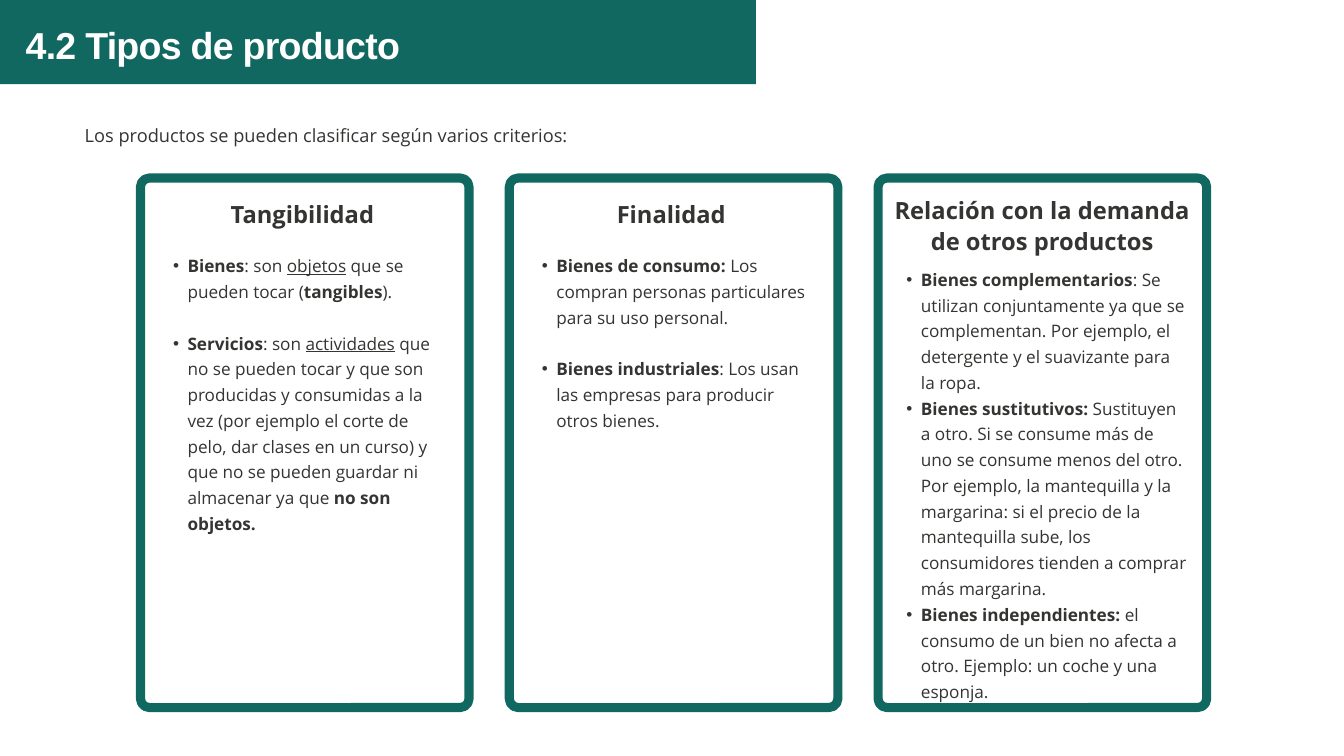
from dataclasses import dataclass

from lxml.etree import SubElement
from pptx import Presentation
from pptx.dml.color import RGBColor
from pptx.enum.shapes import MSO_SHAPE as SHAPE
from pptx.enum.text import MSO_ANCHOR as ANCHOR, MSO_AUTO_SIZE as AUTOSIZE, PP_ALIGN as ALIGN
from pptx.oxml.ns import qn
from pptx.util import Cm, Pt


@dataclass(frozen=True)
class Theme:
    """Colours, fonts and (size, line spacing) pairs in points."""
    green: RGBColor = RGBColor(0x10, 0x68, 0x61)
    ink: RGBColor = RGBColor(0x34, 0x34, 0x32)
    white: RGBColor = RGBColor(0xFF, 0xFF, 0xFF)
    title_font: str = "Arial"
    body_font: str = "Open Sans"
    title: tuple = (40.2, 56.3)
    intro: tuple = (19.5, 29.2)
    heading: tuple = (25.4, 32.6)
    item: tuple = (18.4, 27.6)


@dataclass(frozen=True)
class Card:
    """A criterion with its items; each item is a list of (text, style) runs."""
    heading: str
    items: list
    heading_box: tuple = (1.96, 7.49, 8.33, 1.12)
    list_box: tuple = (0.69, 9.47, 10.87, 11.38)
    gap: float = 27.6


THEME = Theme()
CARD_LEFT, CARD_TOP, CARD_W, CARD_H, PITCH = 5.31, 6.73, 12.42, 20.02, 13.94

CARDS = [
    Card("Tangibilidad", [
        [("Bienes", "b"), (": son ", ""), ("objetos", "u"), (" que se pueden tocar (", ""),
         ("tangibles", "b"), (").", "")],
        [("Servicios", "b"), (": son ", ""), ("actividades", "u"),
         (" que no se pueden tocar y que son producidas y consumidas a la vez (por ejemplo "
          "el corte de pelo, dar clases en un curso) y que no se pueden guardar ni almacenar "
          "ya que ", ""), ("no son objetos.", "b")],
    ]),
    Card("Finalidad", [
        [("Bienes de consumo:", "b"),
         (" Los compran personas particulares para su uso personal.", "")],
        [("Bienes industriales", "b"),
         (": Los usan las empresas para producir otros bienes.", "")],
    ]),
    Card("Relación con la demanda de otros productos", [
        [("Bienes complementarios", "b"),
         (": Se utilizan conjuntamente ya que se complementan. Por ejemplo, el detergente y "
          "el suavizante para la ropa.", "")],
        [("Bienes sustitutivos:", "b"),
         (" Sustituyen a otro. Si se consume más de uno se consume menos del otro. Por "
          "ejemplo, la mantequilla y la margarina: si el precio de la mantequilla sube, los "
          "consumidores tienden a comprar más margarina.", "")],
        [("Bienes independientes: ", "b"),
         ("el consumo de un bien no afecta a otro. Ejemplo: un coche y una esponja.", "")],
    ], (0.53, 7.34, 11.35, 2.26), (0.53, 9.98, 11.2, 17.09), 0),
]


def add_panel(slide, kind, box, fill, line=None):
    """Add a flat shape with an optional thick outline."""
    sp = slide.shapes.add_shape(kind, *map(Cm, box))
    sp.shadow.inherit = False
    sp.fill.solid()
    sp.fill.fore_color.rgb = fill
    if line is None:
        sp.line.fill.background()
    else:
        sp.line.color.rgb = line
        sp.line.width = Pt(9.75)
    return sp


def prepare_frame(sp):
    """Give a text shape no margins, top anchoring and wrapping."""
    tf = sp.text_frame
    tf.margin_left = tf.margin_top = tf.margin_right = tf.margin_bottom = 0
    tf.vertical_anchor = ANCHOR.TOP
    tf.auto_size = AUTOSIZE.NONE
    tf.word_wrap = True
    return tf


def place(slide, sp, box):
    """Move a placeholder to a box, in front of what is already drawn."""
    sp.left, sp.top, sp.width, sp.height = map(Cm, box)
    slide.shapes._spTree.append(sp._element)
    return prepare_frame(sp)


def format_paragraph(p, level, align=ALIGN.LEFT, before=0):
    """Set alignment, exact line spacing and the space before."""
    p.alignment = align
    p.line_spacing = Pt(level[1])
    p.space_before = Pt(before)
    p.space_after = Pt(0)


def format_run(r, level, style="", color=THEME.ink, name=THEME.body_font):
    """Set the font of a run; style holds b for bold and u for underlined."""
    font = r.font
    font.name, font.size = name, Pt(level[0])
    font.bold = "b" in style
    font.underline = "u" in style
    font.color.rgb = color


def write_line(tf, text, level, style="", align=ALIGN.LEFT, **font):
    """Write a single formatted paragraph and return its run."""
    tf.text = text
    p = tf.paragraphs[0]
    format_paragraph(p, level, align)
    format_run(p.runs[0], level, style, **font)
    return p.runs[0]


def write_list(tf, items, gap):
    """Write bulleted items separated by a gap in points."""
    for i, runs in enumerate(items):
        p = tf.add_paragraph() if i else tf.paragraphs[0]
        pPr = p._p.get_or_add_pPr()
        pPr.set("marL", str(Cm(1.09)))
        pPr.set("indent", str(Cm(-0.55)))
        SubElement(pPr, qn("a:buChar")).set("char", "•")
        format_paragraph(p, THEME.item, before=gap if i else 0)
        for text, style in runs:
            r = p.add_run()
            r.text = text
            format_run(r, THEME.item, style)


def add_card(slide, left, card, body):
    """Draw a framed card with its heading and list."""
    sp = add_panel(slide, SHAPE.ROUNDED_RECTANGLE, (left, CARD_TOP, CARD_W, CARD_H),
                   THEME.white, THEME.green)
    sp.adjustments[0] = 0.027
    dx, *rest = card.list_box
    write_list(place(slide, body, (left + dx, *rest)), card.items, card.gap)
    dx, *rest = card.heading_box
    heading = slide.shapes.add_textbox(*map(Cm, (left + dx, *rest)))
    write_line(prepare_frame(heading), card.heading, THEME.heading, "b", ALIGN.CENTER)


def main():
    """Build the slide and save it."""
    prs = Presentation()
    prs.slide_width, prs.slide_height = Cm(50.8), Cm(28.58)
    slide = prs.slides.add_slide(prs.slide_layouts.get_by_name("Comparison"))
    title, intro, *bodies = slide.placeholders

    add_panel(slide, SHAPE.RECTANGLE, (0, 0, 28.57, 3.18), THEME.green)
    r = write_line(place(slide, title, (0.97, 0.53, 29.46, 1.91)), "4.2 Tipos de producto",
                   THEME.title, "b", color=THEME.white, name=THEME.title_font)
    r._r.get_or_add_rPr().set("spc", "-80")
    write_line(place(slide, intro, (3.2, 4.5, 42.44, 1.2)),
               "Los productos se pueden clasificar según varios criterios:", THEME.intro)

    for i, (card, body) in enumerate(zip(CARDS, bodies)):
        add_card(slide, CARD_LEFT + i * PITCH, card, body)
    prs.save("out.pptx")


if __name__ == "__main__":
    main()
